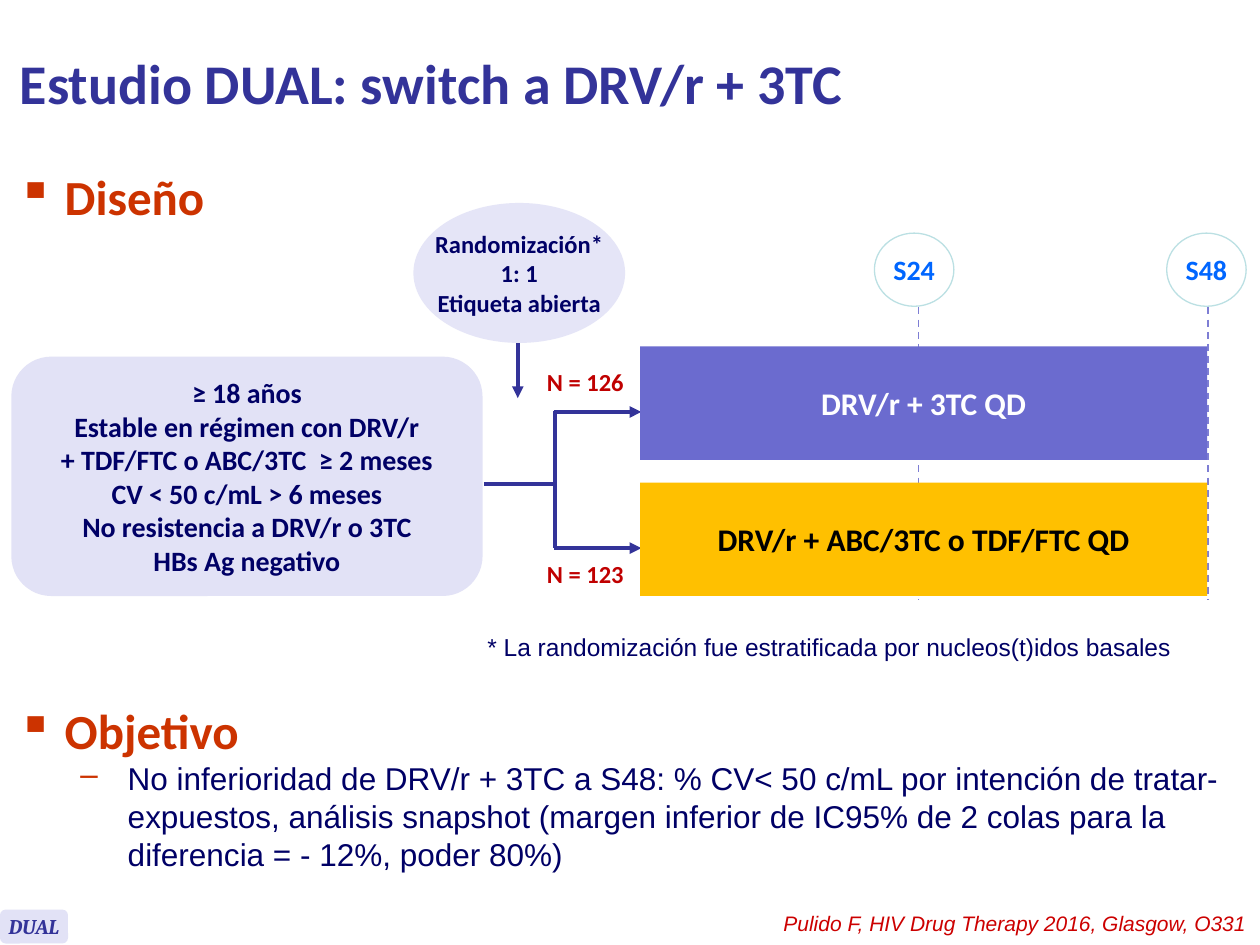
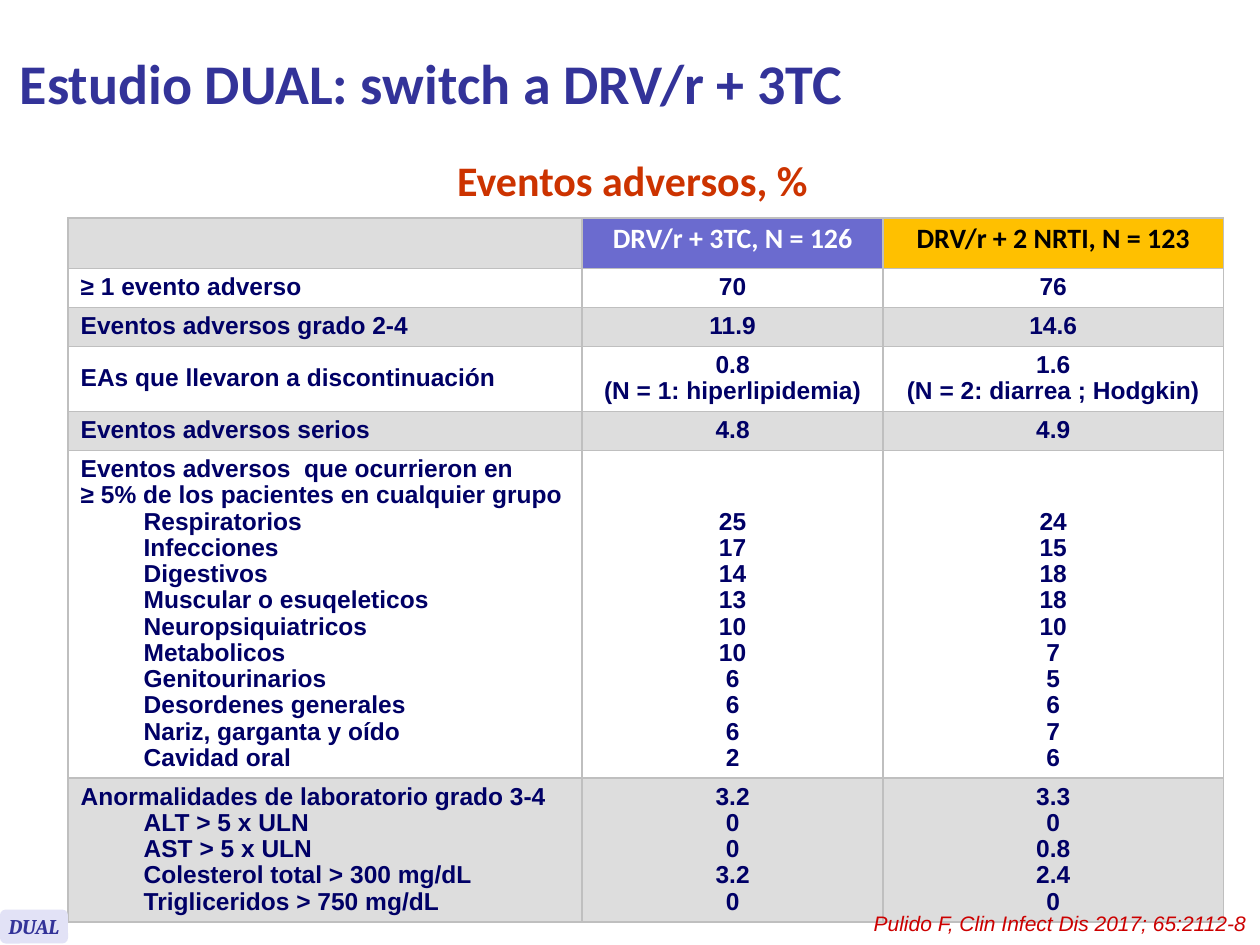
from lxml import etree
from pptx import Presentation
from pptx import util as u
from pptx.dml.color import RGBColor
from pptx.enum import dml, shapes, text
from pptx.oxml.ns import qn

Pt = u.Pt
KIND = shapes.MSO_SHAPE
MID = text.MSO_ANCHOR.MIDDLE
LEFT, MIDDLE, RIGHT = text.PP_ALIGN.LEFT, text.PP_ALIGN.CENTER, text.PP_ALIGN.RIGHT

INK, NAVY, RED, CRIMSON = "333399", "000066", "CC3300", "C00000"
PALE, VIOLET, GOLD, GREY, WHITE = "E2E2F6", "6B6BCF", "FFC000", "DDDDDD", "FFFFFF"
BLACK, DASH, RING, EDGE = "000000", "7E7ED4", "BBE0E3", "BFBFBF"

TITLE = "Estudio DUAL: switch a DRV/r + 3TC"
CITES = ["Pulido F, HIV Drug Therapy 2016, Glasgow, O331",
         "Pulido F, Clin Infect Dis 2017; 65:2112-8"]
COHORT = ["≥ 18 años", "Estable en régimen con DRV/r", "+ TDF/FTC o ABC/3TC  ≥ 2 meses",
          "CV < 50 c/mL > 6 meses", "No resistencia a DRV/r o 3TC", "HBs Ag negativo"]
DRAW = ["Randomización*", "1: 1", "Etiqueta abierta"]
ARMS = [("DRV/r + 3TC QD", VIOLET, WHITE, "N = 126", 206),
        ("DRV/r + ABC/3TC o TDF/FTC QD", GOLD, BLACK, "N = 123", 316)]
WEEKS = [("S24", 499.7, 524.9), ("S48", 666.7, 690.5)]
NOTE = "* La randomización fue estratificada por nucleos(t)idos basales"
GOAL = ("No inferioridad de DRV/r + 3TC a S48: % CV< 50 c/mL por intención de "
        "tratar-expuestos, análisis snapshot (margen inferior de IC95% de 2 colas "
        "para la diferencia = - 12%, poder 80%)")

HEADS = [("", GREY, NAVY), ("DRV/r + 3TC, N = 126", VIOLET, WHITE),
         ("DRV/r + 2 NRTI, N = 123", GOLD, BLACK)]
EVENTS = [
    (["≥ 1 evento adverso"], [], ["70"], ["76"]),
    (["Eventos adversos grado 2-4"], [], ["11.9"], ["14.6"]),
    (["EAs que llevaron a discontinuación"], [],
     ["0.8", "(N = 1: hiperlipidemia)"], ["1.6", "(N = 2: diarrea ; Hodgkin)"]),
    (["Eventos adversos serios"], [], ["4.8"], ["4.9"]),
    (["Eventos adversos  que ocurrieron en", "≥ 5% de los pacientes en cualquier grupo"],
     ["Respiratorios", "Infecciones", "Digestivos", "Muscular o esuqeleticos",
      "Neuropsiquiatricos", "Metabolicos", "Genitourinarios", "Desordenes generales",
      "Nariz, garganta y oído", "Cavidad oral"],
     ["25", "17", "14", "13", "10", "10", "6", "6", "6", "2"],
     ["24", "15", "18", "18", "10", "7", "5", "6", "7", "6"]),
    (["Anormalidades de laboratorio grado 3-4"],
     ["ALT > 5 x ULN", "AST > 5 x ULN", "Colesterol total > 300 mg/dL",
      "Trigliceridos > 750 mg/dL"],
     ["3.2", "0", "0", "3.2", "0"], ["3.3", "0", "0.8", "2.4", "0"]),
]
COLS = [293.8, 172, 194.4]
LINE, PAD = 15, 7.2


def paint(part, tone):
    part.fill.solid()
    part.fill.fore_color.rgb = RGBColor.from_string(tone)


def write(frame, lines, size, tone, face="Calibri", bold=True, slant=False,
          align=LEFT, lead=None):
    for i, line in enumerate(lines):
        para = frame.paragraphs[0] if i == 0 else frame.add_paragraph()
        para.alignment = align
        if lead:
            para.line_spacing = Pt(lead)
        run = para.add_run()
        run.text = line
        font = run.font
        font.size, font.name, font.bold, font.italic = Pt(size), face, bold, slant
        font.color.rgb = RGBColor.from_string(tone)


def label(slide, box, lines, size, tone, wrap=True, anchor=text.MSO_ANCHOR.TOP, **look):
    frame = slide.shapes.add_textbox(*map(Pt, box)).text_frame
    frame.word_wrap, frame.vertical_anchor = wrap, anchor
    write(frame, lines, size, tone, **look)
    return frame


def block(slide, kind, box, fill, lines, size, tone, edge=None, wrap=False, **look):
    form = slide.shapes.add_shape(kind, *map(Pt, box))
    form.shadow.inherit = False
    paint(form, fill)
    if edge:
        form.line.color.rgb = RGBColor.from_string(edge)
        form.line.width = Pt(0.75)
    else:
        form.line.fill.background()
    frame = form.text_frame
    frame.word_wrap, frame.vertical_anchor = wrap, MID
    write(frame, lines, size, tone, align=MIDDLE, **look)


def wire(slide, ends, tone=INK, width=2.25, dash=False, arrow=False):
    link = slide.shapes.add_connector(shapes.MSO_CONNECTOR.STRAIGHT, *map(Pt, ends))
    link.line.color.rgb = RGBColor.from_string(tone)
    link.line.width = Pt(width)
    if dash:
        link.line.dash_style = dml.MSO_LINE.DASH
    if arrow:
        etree.SubElement(link.line._get_or_add_ln(), qn("a:tailEnd"), type="triangle")
    etree.SubElement(link._element.spPr, qn("a:effectLst"))


def indent(para, left, hang=0, mark=None):
    props = para._p.get_or_add_pPr()
    props.set("marL", str(Pt(left)))
    props.set("indent", str(Pt(-hang)))
    if mark:
        tint = etree.SubElement(props, qn("a:buClr"))
        etree.SubElement(tint, qn("a:srgbClr"), val=RED)
        etree.SubElement(props, qn("a:buChar"), char=mark)


def frame_cell(cell, fill):
    props = cell._tc.get_or_add_tcPr()
    for side in ("lnL", "lnR", "lnT", "lnB"):
        line = etree.SubElement(props, qn("a:" + side), w=str(Pt(1)))
        solid = etree.SubElement(line, qn("a:solidFill"))
        etree.SubElement(solid, qn("a:srgbClr"), val=EDGE)
    paint(cell, fill)
    cell.vertical_anchor = MID


def start(deck, cite):
    slide = deck.slides.add_slide(deck.slide_layouts[6])
    label(slide, (4.3, 3.6, 645, 87), [TITLE], 32, INK, anchor=MID)
    return slide, cite


def finish(slide, cite):
    block(slide, KIND.ROUNDED_RECTANGLE, (0, 519.8, 38.9, 19.4), PALE, ["DUAL"], 12, INK,
          face="Cambria", slant=True)
    label(slide, (394.6, 517, 324.7, 21.6), [cite], 12, "CC0000", face="Arial",
          bold=False, slant=True, align=RIGHT)


def design(slide):
    head = label(slide, (2.9, 91.4, 142.6, 45.4), ["Diseño"], 28, RED)
    indent(head.paragraphs[0], 27, 27, "▪")
    for _, _, x in WEEKS:
        wire(slide, (x, 175.7, x, 342.7), DASH, 1, dash=True)
    wire(slide, (276.5, 276.5, 317, 276.5))
    wire(slide, (317.3, 235, 317.3, 313.2))
    for i, (name, fill, tone, count, y) in enumerate(ARMS):
        top = 198 + 77.8 * i
        bend = 235.4 + 77.8 * i
        wire(slide, (316.4, bend, 366.5, bend), arrow=True)
        block(slide, KIND.RECTANGLE, (365.8, top, 324, 64.8), fill, [name], 18, tone)
        label(slide, (305, y, 59, 24.5), [count], 14, CRIMSON, wrap=False, align=MIDDLE)
    wire(slide, (295.9, 195.8, 295.9, 227.5), arrow=True)
    block(slide, KIND.OVAL, (236.2, 116, 121, 80), "E5E5F7", DRAW, 14, NAVY)
    block(slide, KIND.ROUNDED_RECTANGLE, (6.5, 203.8, 269.3, 136.8), PALE, COHORT, 16, NAVY,
          wrap=True)
    for name, x, _ in WEEKS:
        block(slide, KIND.OVAL, (x, 133.2, 45.4, 41.8), WHITE, [name], 16, "0066FF", edge=RING)
    label(slide, (271.4, 357.8, 417.6, 24.5), [NOTE], 14, NAVY, face="Arial", bold=False)
    aim = label(slide, (2.9, 396.7, 713.5, 111.6), ["Objetivo"], 28, RED)
    indent(aim.paragraphs[0], 27, 27, "▪")
    goal = aim.add_paragraph()
    indent(goal, 63, 27, "–")
    run = goal.add_run()
    run.text = GOAL
    run.font.size, run.font.name = Pt(18), "Arial"
    run.font.color.rgb = RGBColor.from_string(NAVY)


def events(slide):
    label(slide, (128.9, 98.5, 465, 25.2), ["Eventos adversos, %"], 24, RED,
          align=MIDDLE, lead=15.2)
    highs = [26] + [LINE * len(lead + subs) if subs else LINE * len(one)
                    for lead, subs, one, two in EVENTS]
    highs[1:] = [high + PAD for high in highs[1:]]
    grid = slide.shapes.add_table(len(highs), len(COLS), Pt(38.9), Pt(124.6),
                                  Pt(sum(COLS)), Pt(sum(highs))).table
    grid.first_row = grid.horz_banding = False
    for col, wide in zip(grid.columns, COLS):
        col.width = Pt(wide)
    for row, high in zip(grid.rows, highs):
        row.height = Pt(high)
    for c, (name, fill, tone) in enumerate(HEADS):
        cell = grid.cell(0, c)
        frame_cell(cell, fill)
        write(cell.text_frame, [name], 16, tone, align=MIDDLE, lead=LINE)
    for r, (lead, subs, *arms) in enumerate(EVENTS, 1):
        for c, lines in enumerate([lead + subs] + arms):
            cell = grid.cell(r, c)
            frame_cell(cell, WHITE if r % 2 else GREY)
            write(cell.text_frame, lines, 14, NAVY, face="Arial",
                  align=MIDDLE if c else LEFT, lead=LINE)
            if c and subs:
                cell.vertical_anchor = text.MSO_ANCHOR.BOTTOM
        for para in grid.cell(r, 0).text_frame.paragraphs[len(lead):]:
            indent(para, 36)


def main():
    deck = Presentation()
    deck.slide_width, deck.slide_height = Pt(720), Pt(540)
    for cite, fill in zip(CITES, (design, events)):
        slide, cite = start(deck, cite)
        fill(slide)
        finish(slide, cite)
    deck.save("out.pptx")


if __name__ == "__main__":
    main()
